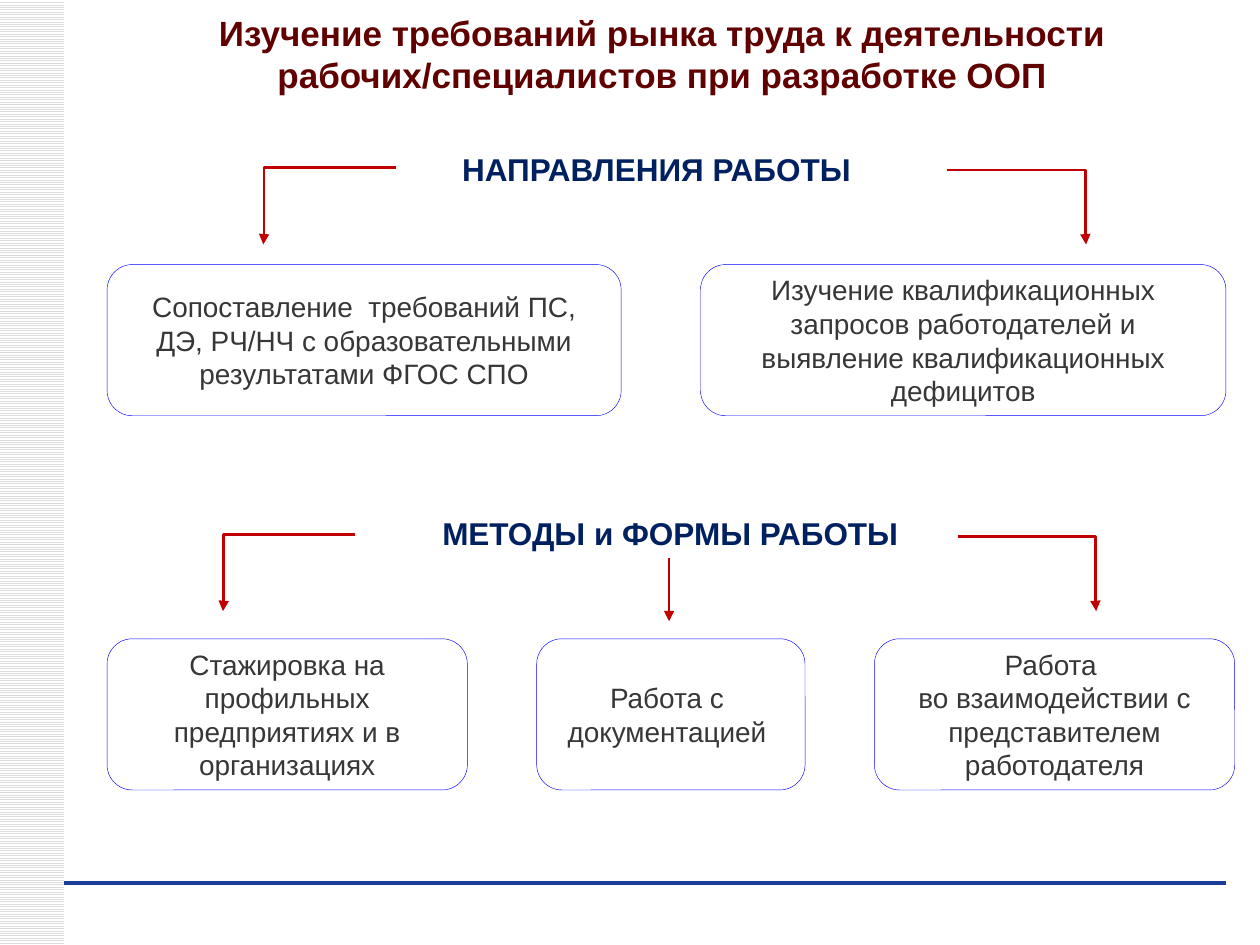
import pptx
import pptx.util
import pptx.dml.color
import pptx.enum.dml
import pptx.enum.shapes
import pptx.enum.text
from lxml import etree
from pptx.util import Inches

# Content: boxes are (left, width, paragraphs)
TITLE = "Изучение требований рынка труда к деятельности рабочих/специалистов при разработке ООП"
SECTIONS = [
    {
        "heading": ("НАПРАВЛЕНИЯ РАБОТЫ", 3.14, 1.14, 4.14),
        "elbows": [(3.14, 1.33, 2.09, 1.94), (7.52, 1.35, 8.62, 1.94)],
        "arrows": [],
        "box_top": 2.1,
        "boxes": [
            (0.85, 4.08, ["Сопоставление  требований ПС, ДЭ, РЧ/НЧ с образовательными результатами ФГОС СПО"]),
            (5.56, 4.17, ["Изучение квалификационных запросов работодателей и выявление квалификационных дефицитов"]),
        ],
    },
    {
        "heading": ("МЕТОДЫ и ФОРМЫ РАБОТЫ", 2.8, 4.03, 5.04),
        "elbows": [(2.82, 4.24, 1.77, 4.85), (7.6, 4.26, 8.7, 4.85)],
        "arrows": [(5.31, 4.43, 5.31, 4.93)],
        "box_top": 5.07,
        "boxes": [
            (0.85, 2.86, ["Стажировка на профильных", "предприятиях и в организациях"]),
            (4.26, 2.13, ["Работа с ", "документацией "]),
            (6.94, 2.86, ["Работа ", "во взаимодействии c представителем работодателя"]),
        ],
    },
]
BOX_HEIGHT = 1.2
COLORS = {
    "title": "600000", "heading": "002060", "body": "373737",
    "box": "0000FF", "arrow": "C00000", "rule": "1A3D97",
    "stripe": "DDDDDD", "paper": "FFFFFF",
}
CONNECTOR = pptx.enum.shapes.MSO_CONNECTOR
SHAPE = pptx.enum.shapes.MSO_SHAPE
MIDDLE = pptx.enum.text.MSO_ANCHOR.MIDDLE


def color(name):
    return pptx.dml.color.RGBColor.from_string(COLORS[name])


def write(frame, paragraphs, size, color_name, bold=False):
    frame.word_wrap = True
    frame.text = "\n".join(paragraphs)
    for paragraph in frame.paragraphs:
        paragraph.alignment = pptx.enum.text.PP_ALIGN.CENTER
        paragraph.font.name = "Arial"
        paragraph.font.size = pptx.util.Pt(size)
        paragraph.font.bold = bold
        paragraph.font.color.rgb = color(color_name)


def add_text(slide, text, left, top, width, height, size, color_name):
    label = slide.shapes.add_textbox(*map(Inches, (left, top, width, height)))
    write(label.text_frame, [text], size, color_name, bold=True)
    return label


def add_line(slide, kind, ends, color_name, width):
    line = slide.shapes.add_connector(kind, *map(Inches, ends))
    line.line.color.rgb = color(color_name)
    line.line.width = pptx.util.Pt(width)
    etree.SubElement(line._element.spPr, pptx.oxml.ns.qn("a:effectLst"))
    return line


def add_arrow(slide, kind, ends):
    arrow = add_line(slide, kind, ends, "arrow", 1.5)
    outline = arrow.line._get_or_add_ln()
    etree.SubElement(outline, pptx.oxml.ns.qn("a:tailEnd"), type="triangle")
    return arrow


def add_elbow(slide, ends):
    elbow = add_arrow(slide, CONNECTOR.ELBOW, ends)
    # Move the bend to the far end so the arrow points down
    guides = elbow._element.spPr.find(".//" + pptx.oxml.ns.qn("a:avLst"))
    etree.SubElement(guides, pptx.oxml.ns.qn("a:gd"), name="adj1", fmla="val 99500")


def add_box(slide, left, top, width, paragraphs):
    box = slide.shapes.add_shape(
        SHAPE.ROUNDED_RECTANGLE, *map(Inches, (left, top, width, BOX_HEIGHT)))
    box.shadow.inherit = False
    box.fill.background()
    box.line.color.rgb = color("box")
    box.line.width = pptx.util.Pt(0.25)
    box.text_frame.vertical_anchor = MIDDLE
    write(box.text_frame, paragraphs, 16, "body")


def main():
    deck = pptx.Presentation()
    deck.slide_width, deck.slide_height = Inches(10), Inches(7.5)
    slide = deck.slides.add_slide(deck.slide_layouts[6])

    # Striped margin and bottom rule
    margin = slide.shapes.add_shape(SHAPE.RECTANGLE, 0, 0, Inches(0.51), deck.slide_height)
    margin.shadow.inherit = False
    margin.line.fill.background()
    margin.fill.patterned()
    margin.fill.pattern = pptx.enum.dml.MSO_PATTERN.LIGHT_HORIZONTAL
    margin.fill.fore_color.rgb = color("stripe")
    margin.fill.back_color.rgb = color("paper")
    add_line(slide, CONNECTOR.STRAIGHT, (0.51, 7.01, 9.73, 7.01), "rule", 0)

    # Title
    title = add_text(slide, TITLE, 0.55, 0.09, 9.41, 0.67, 20, "title")
    title.text_frame.vertical_anchor = MIDDLE

    # Sections: heading, arrows, boxes
    for section in SECTIONS:
        text, left, top, width = section["heading"]
        add_text(slide, text, left, top, width, 0.4, 18, "heading")
        for ends in section["elbows"]:
            add_elbow(slide, ends)
        for ends in section["arrows"]:
            add_arrow(slide, CONNECTOR.STRAIGHT, ends)
        for left, width, paragraphs in section["boxes"]:
            add_box(slide, left, section["box_top"], width, paragraphs)

    deck.save("out.pptx")


if __name__ == "__main__":
    main()
